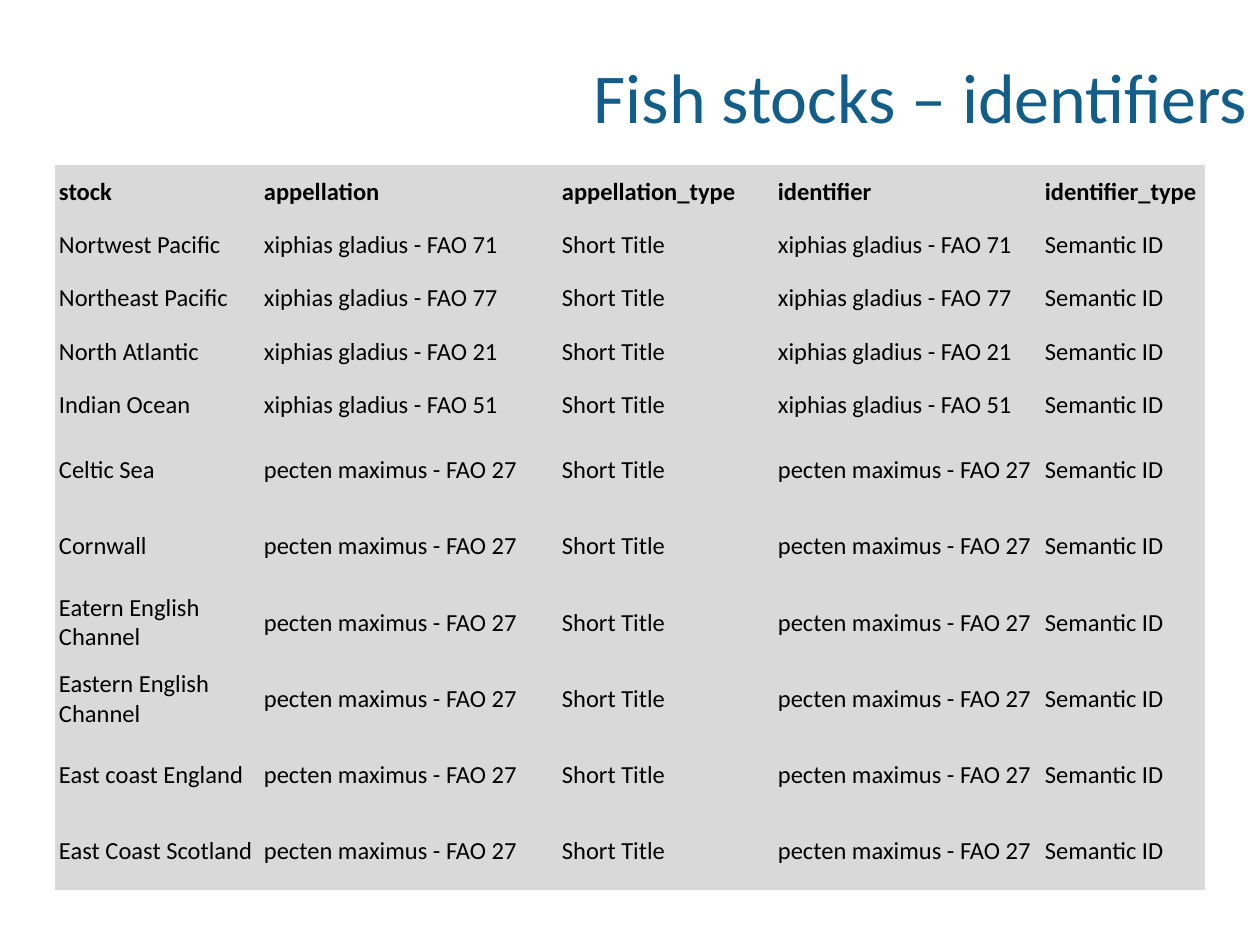
import pptx
import pptx.dml.color
import pptx.enum.text
import pptx.oxml.ns
import pptx.util

PIXELS_PER_INCH = 126
NO_STYLE_NO_GRID = "{2D5ABB26-0587-4C30-8999-92F81FD0307C}"

HEADER = ["stock", "appellation", "appellation_type", "identifier", "identifier_type"]
SWORDFISH_STOCKS = [
    ("Nortwest Pacific", 71),
    ("Northeast Pacific", 77),
    ("North Atlantic", 21),
    ("Indian Ocean", 51),
]
SCALLOP_STOCKS = [
    "Celtic Sea",
    "Cornwall",
    "Eatern English Channel",
    "Eastern English Channel",
    "East coast England",
    "East Coast Scotland",
]


def px(length):
    return pptx.util.Emu(length * pptx.util.Inches(1) // PIXELS_PER_INCH)


def color(hex_string):
    return pptx.dml.color.RGBColor.from_string(hex_string)


def stock_row(stock, species, area):
    """Return a table row; the appellation doubles as the semantic identifier."""
    name = f"{species} - FAO {area}"
    return [stock, name, "Short Title", name, "Semantic ID"]


class SlideBuilder:
    font_name = "Calibri"
    title_color = "125E89"
    text_color = "000000"
    cell_color = "D9D9D9"

    def __init__(self, slide):
        self.slide = slide

    def style_font(self, paragraph, size, hex_string, bold=False):
        font = paragraph.font
        font.name = self.font_name
        font.size = pptx.util.Pt(size)
        font.bold = bold
        font.color.rgb = color(hex_string)

    def title(self, text, left, top, width, height):
        shape = self.slide.shapes.title
        shape.left, shape.top = px(left), px(top)
        shape.width, shape.height = px(width), px(height)
        frame = shape.text_frame
        frame.text = text
        frame.vertical_anchor = pptx.enum.text.MSO_ANCHOR.MIDDLE
        paragraph = frame.paragraphs[0]
        paragraph.alignment = pptx.enum.text.PP_ALIGN.RIGHT
        self.style_font(paragraph, 40, self.title_color)

    def cell(self, cell, text, bold):
        cell.text = text
        cell.fill.solid()
        cell.fill.fore_color.rgb = color(self.cell_color)
        cell.vertical_anchor = pptx.enum.text.MSO_ANCHOR.MIDDLE
        cell.margin_left = cell.margin_right = px(4)
        cell.margin_top = cell.margin_bottom = px(2)
        self.style_font(cell.text_frame.paragraphs[0], 14, self.text_color, bold)

    def table(self, rows, left, top, column_widths, row_heights):
        """Add a plain table whose first row is bold; row heights are in EMU."""
        frame = self.slide.shapes.add_table(
            len(rows), len(column_widths), px(left), px(top),
            px(sum(column_widths)), sum(row_heights))
        table = frame.table
        table.first_row = table.horz_banding = False
        style = frame.element.find(".//" + pptx.oxml.ns.qn("a:tableStyleId"))
        style.text = NO_STYLE_NO_GRID
        for column, width in zip(table.columns, column_widths):
            column.width = px(width)
        for row_index, (row, height) in enumerate(zip(table.rows, row_heights)):
            row.height = height
            for cell, text in zip(row.cells, rows[row_index]):
                self.cell(cell, text, bold=row_index == 0)


def main():
    presentation = pptx.Presentation()
    presentation.slide_width = px(1260)
    presentation.slide_height = px(945)
    title_only = presentation.slide_layouts[5]
    builder = SlideBuilder(presentation.slides.add_slide(title_only))

    builder.title("Fish stocks – identifiers", 357, 16, 903, 158)

    short_rows = [HEADER]
    short_rows += [stock_row(stock, "xiphias gladius", area)
                   for stock, area in SWORDFISH_STOCKS]
    tall_rows = [stock_row(stock, "pecten maximus", 27) for stock in SCALLOP_STOCKS]
    row_heights = [px(267) // len(short_rows)] * len(short_rows)
    row_heights += [px(458) // len(tall_rows)] * len(tall_rows)
    builder.table(short_rows + tall_rows, 55, 165,
                  [205, 298, 216, 267, 164], row_heights)

    presentation.save("out.pptx")


if __name__ == "__main__":
    main()
